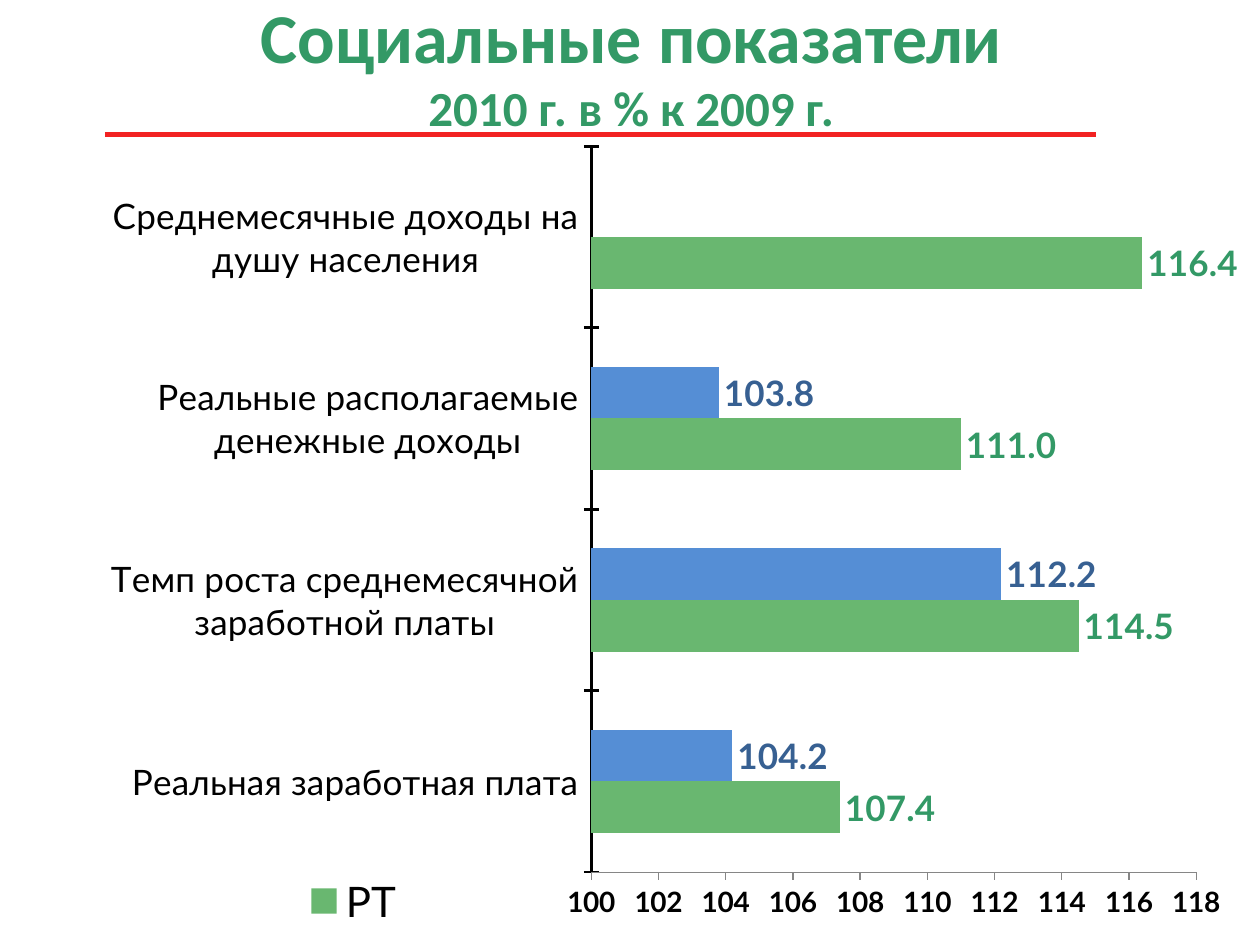
import pptx
import pptx.chart.data
import pptx.dml.color
import pptx.enum.chart
import pptx.enum.shapes
import pptx.enum.text
import pptx.oxml
import pptx.oxml.ns
import pptx.util

Pt = pptx.util.Pt
RGB = pptx.dml.color.RGBColor
enum = pptx.enum.chart
qn = pptx.oxml.ns.qn

GREEN = RGB(0x33, 0x99, 0x66)
LEAF = RGB(0x69, 0xB7, 0x70)
BLUE = RGB(0x55, 0x8E, 0xD5)
NAVY = RGB(0x37, 0x60, 0x92)
RED = RGB(0xF2, 0x22, 0x22)
GREY = RGB(0x86, 0x86, 0x86)
BLACK = RGB(0, 0, 0)


def style(item, vals):
    """Set each named value; a colour goes to the item's own colour."""
    for name, val in vals.items():
        if name == "color":
            item.color.rgb = val
        else:
            setattr(item, name, val)


def layout(x, y, wide, high, inner=False):
    """Make a manual chart layout from fractions of the chart area."""
    parts = [("layoutTarget", "inner")] if inner else []
    parts += [("xMode", "edge"), ("yMode", "edge"),
              ("x", x), ("y", y), ("w", wide), ("h", high)]
    body = "".join(f'<c:{tag} val="{val}"/>' for tag, val in parts)
    return pptx.oxml.parse_xml(
        f'<c:layout {pptx.oxml.ns.nsdecls("c")}>'
        f"<c:manualLayout>{body}</c:manualLayout></c:layout>")


deck = pptx.Presentation()
style(deck, {"slide_width": Pt(720), "slide_height": Pt(540)})
slide = deck.slides.add_slide(deck.slide_layouts[6])

# Red rule under the title
rule = slide.shapes.add_connector(
    pptx.enum.shapes.MSO_CONNECTOR.STRAIGHT, Pt(60), Pt(77), Pt(626.4), Pt(77))
style(rule.line, {"color": RED, "width": Pt(2.75)})
rule._element.spPr.append(pptx.oxml.parse_xml(
    f'<a:effectLst {pptx.oxml.ns.nsdecls("a")}/>'))

# Title with a soft text shadow
box = slide.shapes.add_textbox(Pt(36.7), Pt(-7.9), Pt(648), Pt(90))
frame = box.text_frame
style(frame, {"word_wrap": True,
              "vertical_anchor": pptx.enum.text.MSO_ANCHOR.MIDDLE})
para = frame.paragraphs[0]
para.alignment = pptx.enum.text.PP_ALIGN.CENTER
for text, size in [("Социальные показатели", 40), ("2010 г. в % к 2009 г.", 28)]:
    if para.runs:
        para.add_line_break()
    run = para.add_run()
    run.text = text
    style(run.font, {"size": Pt(size), "bold": True, "color": GREEN,
                     "name": "Calibri"})
    shade = pptx.oxml.parse_xml(
        f'<a:effectLst {pptx.oxml.ns.nsdecls("a")}>'
        '<a:outerShdw blurRad="38100" dist="38100" dir="2700000" algn="tl">'
        '<a:srgbClr val="000000"><a:alpha val="43000"/></a:srgbClr>'
        '</a:outerShdw></a:effectLst>')
    run.font._element.find(qn("a:solidFill")).addnext(shade)

# Chart data
data = pptx.chart.data.CategoryChartData()
data.categories = ["Реальная заработная плата",
                   "Темп роста среднемесячной заработной платы",
                   "Реальные располагаемые денежные доходы",
                   "Среднемесячные доходы на душу населения"]
data.add_series("РТ", [107.4, 114.5, 111, 116.4])
data.add_series("РФ", [104.2, 112.2, 103.8, None])
chart = slide.shapes.add_chart(
    enum.XL_CHART_TYPE.BAR_CLUSTERED,
    Pt(20.2), Pt(82.8), Pt(699.8), Pt(457.2), data).chart
style(chart, {"has_title": False, "has_legend": True})
style(chart.font, {"size": Pt(18), "name": "Calibri", "color": BLACK})

# Bars and value labels
plot = chart.plots[0]
style(plot, {"gap_width": 150, "overlap": 0, "vary_by_categories": False})
for bar, fill, ink in zip(plot.series, [LEAF, BLUE], [GREEN, NAVY]):
    bar.format.fill.solid()
    bar.format.fill.fore_color.rgb = fill
    bar.invert_if_negative = False
    style(bar.data_labels, {
        "show_value": True, "number_format": "#,##0.0",
        "number_format_is_linked": False,
        "position": enum.XL_LABEL_POSITION.OUTSIDE_END})
    style(bar.data_labels.font, {"size": Pt(20), "bold": True, "name": "Lato",
                                 "color": ink})

# Axes
tick = enum.XL_TICK_MARK
names = chart.category_axis
style(names, {"major_tick_mark": tick.CROSS, "minor_tick_mark": tick.NONE,
              "has_major_gridlines": False,
              "tick_label_position": enum.XL_TICK_LABEL_POSITION.LOW})
style(names.tick_labels.font, {"size": Pt(20), "name": "Lato", "color": BLACK})
style(names.format.line, {"color": BLACK, "width": Pt(1.5)})

scale = chart.value_axis
style(scale, {"minimum_scale": 100, "maximum_scale": 118, "major_unit": 2,
              "major_tick_mark": tick.OUTSIDE, "minor_tick_mark": tick.NONE,
              "has_major_gridlines": False})
style(scale.tick_labels, {"number_format": "0", "number_format_is_linked": False})
style(scale.tick_labels.font, {"size": Pt(16), "bold": True, "name": "Lato",
                               "color": BLACK})
style(scale.format.line, {"color": GREY, "width": Pt(0.75)})

# Legend at the lower left, with the second series only
key = chart.legend
style(key, {"position": enum.XL_LEGEND_POSITION.RIGHT,
            "include_in_layout": False})
style(key.font, {"size": Pt(24), "name": "Lato", "color": BLACK})
node = key._element
area = chart._chartSpace.chart.plotArea
for part in (node, area):
    for old in part.findall(qn("c:layout")):
        part.remove(old)
skip = pptx.oxml.parse_xml(
    f'<c:legendEntry {pptx.oxml.ns.nsdecls("c")}>'
    '<c:idx val="0"/><c:delete val="1"/></c:legendEntry>')
node.find(qn("c:legendPos")).addnext(skip)
skip.addnext(layout(0.21, 0.91, 0.1, 0.07))
area.insert(0, layout(0.454, 0, 0.494, 0.909, inner=True))

deck.save("out.pptx")
